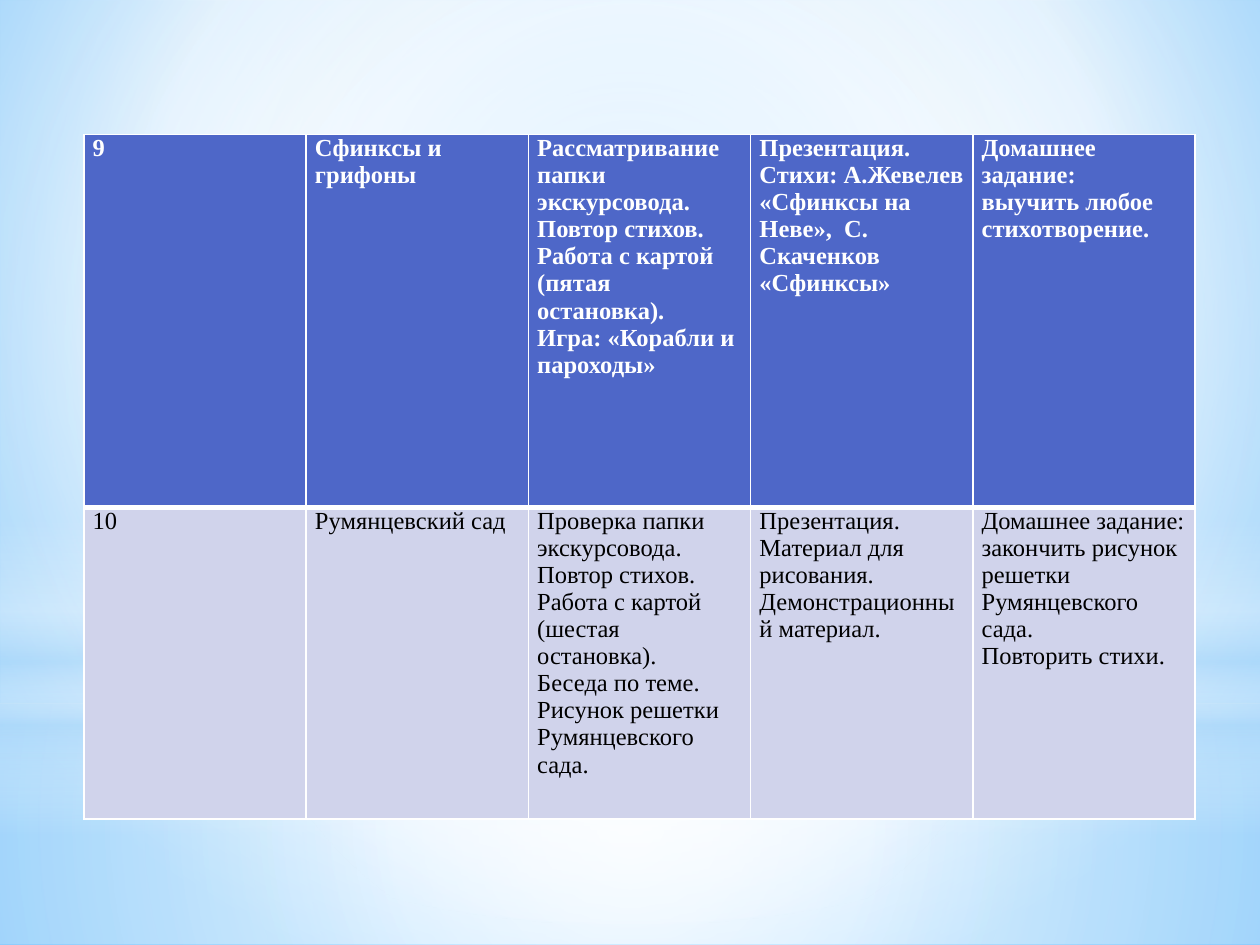
"""Build a slide with a two-row lesson plan table on a soft blue glow."""
from dataclasses import dataclass

from lxml import etree
from pptx import Presentation
from pptx import util as u
from pptx.dml.color import RGBColor
from pptx.enum import shapes as sh
from pptx.oxml.ns import qn

NS = "http://schemas.openxmlformats.org/drawingml/2006/main"
MID = (50, 50, 50, 50)


@dataclass(frozen=True)
class Theme:
    white: str = "FFFFFF"
    black: str = "000000"
    sky: str = "B4DCFA"
    rim: str = "5BB9FF"
    core: str = "9ED5FF"
    head: str = "4E67C8"
    body: str = "D0D3EB"
    font: str = "Times New Roman"
    size: int = 14


@dataclass(frozen=True)
class Grad:
    stops: tuple
    focus: tuple | None = MID


@dataclass(frozen=True)
class Glow:
    kind: int
    top: float
    high: float
    grad: Grad


@dataclass(frozen=True)
class Row:
    high: float
    fill: str
    ink: str
    bold: bool
    base: float
    cells: tuple


T = Theme()

BACK = Grad(((0, T.core, 100), (60, T.white, 100), (100, T.rim, 100)),
            (20, 10, 20, 60))

RECT = sh.MSO_SHAPE.RECTANGLE
GLOWS = (
    Glow(RECT, 402, 138, Grad(
        ((0, T.white, 91), (37, T.white, 76), (100, T.sky, 79)))),
    Glow(RECT, 0, 402, Grad(
        ((0, T.white, 89), (48, T.white, 62), (100, T.sky, 79)))),
    Glow(RECT, 297, 180, Grad(
        ((0, T.white, 0), (29, T.white, 30), (45, T.sky, 40),
         (55, T.white, 26), (65, T.sky, 60), (100, T.white, 0)), None)),
    Glow(sh.MSO_SHAPE.OVAL, 126, 402, Grad(
        ((0, T.white, 100), (56, T.white, 0)))),
)

ROWS = (
    Row(213, T.head, T.white, True, 3, (
        ("9",),
        ("Сфинксы и грифоны",),
        ("Рассматривание папки экскурсовода.", "Повтор стихов.",
         "Работа с картой (пятая остановка).", "Игра: «Корабли и пароходы»"),
        ("Презентация.",
         "Стихи: А.Жевелев «Сфинксы на Неве»,  С. Скаченков «Сфинксы»"),
        ("Домашнее задание:", "выучить любое стихотворение."))),
    Row(178, T.body, T.black, False, 1, (
        ("10",),
        ("Румянцевский сад",),
        ("Проверка папки экскурсовода.", "Повтор стихов.",
         "Работа с картой (шестая  остановка).", "Беседа по теме.",
         "Рисунок решетки Румянцевского сада."),
        ("Презентация.", "Материал для рисования.",
         "Демонстрационный материал."),
        ("Домашнее задание: закончить рисунок решетки Румянцевского сада.",
         "Повторить стихи."))),
)


def shade(fill, host, grad: Grad) -> None:
    """Give the fill held by host the stops and focus of grad."""
    fill.gradient()
    stops = "".join(
        f'<a:gs pos="{pos * 1000}"><a:srgbClr val="{tint}">'
        f'<a:alpha val="{alpha * 1000}"/></a:srgbClr></a:gs>'
        for pos, tint, alpha in grad.stops)
    if grad.focus:
        left, top, right, low = (side * 1000 for side in grad.focus)
        flow = (f'<a:path path="circle"><a:fillToRect l="{left}" t="{top}" '
                f'r="{right}" b="{low}"/></a:path>')
    else:
        flow = '<a:lin ang="5400000" scaled="0"/>'
    node = etree.fromstring(
        f'<a:gradFill xmlns:a="{NS}" rotWithShape="1">'
        f'<a:gsLst>{stops}</a:gsLst>{flow}</a:gradFill>')
    host.replace(host.find(qn("a:gradFill")), node)


def glow(slide, item: Glow) -> None:
    """Draw one full-width layer of light."""
    shape = slide.shapes.add_shape(
        item.kind, 0, u.Pt(item.top), u.Pt(720), u.Pt(item.high))
    shape.shadow.inherit = False
    shape.line.fill.background()
    shade(shape.fill, shape.element.spPr, item.grad)


def write(frame, lines: tuple, *, ink: str, bold: bool) -> None:
    """Write one paragraph for each line of text."""
    for num, line in enumerate(lines):
        para = frame.add_paragraph() if num else frame.paragraphs[0]
        run = para.add_run()
        run.text = line
        font = run.font
        font.name, font.size, font.bold = T.font, u.Pt(T.size), bold
        font.color.rgb = RGBColor.from_string(ink)


def edge(cell, base: float) -> None:
    """Put white borders round a cell, with its own width at the base."""
    props = cell._tc.get_or_add_tcPr()
    for num, side in enumerate("LRTB"):
        wide = u.Pt(base if side == "B" else 1)
        props.insert(num, etree.fromstring(
            f'<a:ln{side} xmlns:a="{NS}" w="{wide}"><a:solidFill>'
            f'<a:srgbClr val="{T.white}"/></a:solidFill></a:ln{side}>'))


def plan(slide, rows: tuple) -> None:
    """Draw the lesson plan table."""
    count = len(rows[0].cells)
    wide = 127
    high = sum(row.high for row in rows)
    table = slide.shapes.add_table(
        len(rows), count, u.Pt(48), u.Pt(77),
        u.Pt(wide * count), u.Pt(high)).table
    table.first_row = table.horz_banding = False
    for col in table.columns:
        col.width = u.Pt(wide)
    for line, row in zip(table.rows, rows):
        line.height = u.Pt(row.high)
        for cell, lines in zip(line.cells, row.cells):
            cell.margin_left = cell.margin_right = u.Pt(5)
            cell.margin_top = cell.margin_bottom = 0
            cell.fill.solid()
            cell.fill.fore_color.rgb = RGBColor.from_string(row.fill)
            edge(cell, row.base)
            write(cell.text_frame, lines, ink=row.ink, bold=row.bold)


def main() -> None:
    """Build and save the slide."""
    deck = Presentation()
    deck.slide_width, deck.slide_height = u.Pt(720), u.Pt(540)
    slide = deck.slides.add_slide(deck.slide_layouts[6])
    fill = slide.background.fill
    fill.gradient()
    shade(fill, slide.element.find(".//" + qn("p:bgPr")), BACK)
    for item in GLOWS:
        glow(slide, item)
    plan(slide, ROWS)
    deck.save("out.pptx")


if __name__ == "__main__":
    main()
